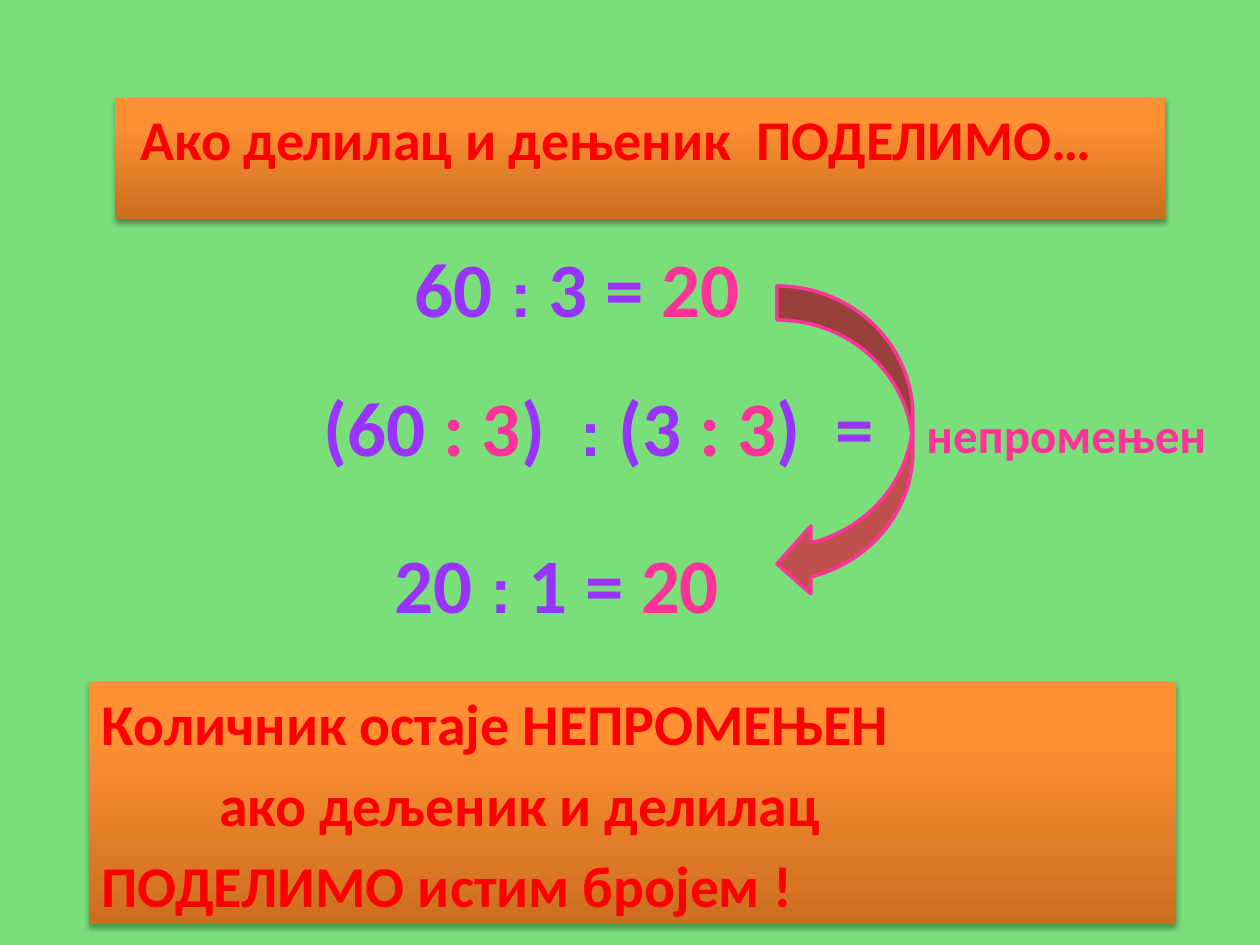
"""Build a slide showing that a quotient stays unchanged when both terms are divided."""
from copy import deepcopy
from dataclasses import dataclass

from lxml import etree
from pptx import Presentation
from pptx import util as u
from pptx.dml.color import RGBColor
from pptx.enum import shapes, text
from pptx.oxml.ns import qn

EMU_PER_PX = 914400 / 126


@dataclass(frozen=True)
class Theme:
    background: str = "7ADE7A"
    rule: str = "FF0000"
    number: str = "9933FF"
    accent: str = "FF3399"
    arrow: str = "C0504D"
    gradient: tuple[tuple[float, str], ...] = ((0, "CC6E20"), (0.8, "FF9034"), (1, "FF9136"))
    font: str = "Calibri"
    colon_font: str = "Arial"
    number_size: int = 44
    colon_size: int = 36
    heading_size: int = 32
    rule_size: int = 33
    label_size: int = 28
    arrow_width: int = 2


@dataclass(frozen=True)
class Box:
    left: int
    top: int
    width: int
    height: int

    def emu(self) -> tuple[int, ...]:
        return tuple(px(v) for v in (self.left, self.top, self.width, self.height))


@dataclass(frozen=True)
class Term:
    wording: str
    color: str
    colon: bool = False


@dataclass(frozen=True)
class Equation:
    box: Box
    terms: tuple[Term, ...]


@dataclass(frozen=True)
class Line:
    wording: str
    indent: int = 0


@dataclass(frozen=True)
class Banner:
    box: Box
    size: int
    lines: tuple[Line, ...]


THEME = Theme()
N, A = THEME.number, THEME.accent

EQUATIONS = (
    Equation(Box(32, 347, 1134, 158), (
        Term("(60", N), Term(" : 3", A), Term(")  ", N), Term(": ", N, True),
        Term("(3 ", N), Term(": 3", A), Term(")  =", N))),
    Equation(Box(10, 208, 1134, 158), (
        Term("60 ", N), Term(": ", N, True), Term("3 = ", N), Term("20", A))),
    Equation(Box(-10, 504, 1134, 158), (
        Term("20 ", N), Term(":", N, True), Term(" 1 = ", N), Term("20", A))),
)
BANNERS = (
    Banner(Box(89, 682, 1087, 242), THEME.rule_size, (
        Line("Количник остаје НЕПРОМЕЊЕН"),
        Line("ако дељеник и делилац", 118),
        Line("ПОДЕЛИМО истим бројем !"))),
    Banner(Box(115, 98, 1050, 121), THEME.heading_size, (
        Line("Ако делилац и дењеник  ПОДЕЛИМО…", 13),)),
)


def px(length: int) -> int:
    return round(length * EMU_PER_PX)


def set_font(font, size: int, color: str, name: str = THEME.font) -> None:
    font.name, font.size, font.bold = name, u.Pt(size), True
    font.color.rgb = RGBColor.from_string(color)


def add_shadow(shape) -> None:
    effects = etree.SubElement(shape._element.spPr, qn("a:effectLst"))
    outer = etree.SubElement(effects, qn("a:outerShdw"), blurRad="40000", dist="23000",
                             dir="5400000", rotWithShape="0")
    black = etree.SubElement(outer, qn("a:srgbClr"), val="000000")
    etree.SubElement(black, qn("a:alpha"), val="35000")


def fill_gradient(shape) -> None:
    fill = shape.fill
    fill.gradient()
    fill.gradient_angle = 90
    stops = shape._element.spPr.find(".//" + qn("a:gsLst"))
    stops.append(deepcopy(stops[-1]))
    for stop, (position, color) in zip(fill.gradient_stops, THEME.gradient):
        stop.position = position
        stop.color.rgb = RGBColor.from_string(color)


def draw_banner(slide, banner: Banner) -> None:
    panel = slide.shapes.add_shape(shapes.MSO_SHAPE.RECTANGLE, *banner.box.emu())
    fill_gradient(panel)
    panel.line.fill.background()
    add_shadow(panel)
    frame = panel.text_frame
    frame.word_wrap = True
    frame.vertical_anchor = text.MSO_ANCHOR.TOP
    for index, line in enumerate(banner.lines):
        paragraph = frame.add_paragraph() if index else frame.paragraphs[0]
        paragraph.text = line.wording
        paragraph.alignment = text.PP_ALIGN.LEFT
        paragraph.space_before = u.Pt(round(banner.size * 0.2, 1))
        set_font(paragraph.font, banner.size, THEME.rule)
        if line.indent:
            paragraph._p.get_or_add_pPr().set("marL", str(px(line.indent)))


def draw_equation(slide, equation: Equation) -> None:
    frame = slide.shapes.add_textbox(*equation.box.emu()).text_frame
    frame.word_wrap = True
    frame.vertical_anchor = text.MSO_ANCHOR.MIDDLE
    paragraph = frame.paragraphs[0]
    paragraph.alignment = text.PP_ALIGN.CENTER
    for term in equation.terms:
        run = paragraph.add_run()
        run.text = term.wording
        if term.colon:
            set_font(run.font, THEME.colon_size, term.color, THEME.colon_font)
        else:
            set_font(run.font, THEME.number_size, term.color)


def draw_arrow(slide, box: Box) -> None:
    arrow = slide.shapes.add_shape(shapes.MSO_SHAPE.CURVED_LEFT_ARROW, *box.emu())
    arrow.shadow.inherit = False
    arrow.fill.solid()
    arrow.fill.fore_color.rgb = RGBColor.from_string(THEME.arrow)
    arrow.line.color.rgb = RGBColor.from_string(THEME.accent)
    arrow.line.width = u.Pt(THEME.arrow_width)


def draw_label(slide, box: Box, wording: str) -> None:
    frame = slide.shapes.add_textbox(*box.emu()).text_frame
    frame.word_wrap = True
    frame.auto_size = text.MSO_AUTO_SIZE.SHAPE_TO_FIT_TEXT
    paragraph = frame.paragraphs[0]
    paragraph.text = wording
    set_font(paragraph.font, THEME.label_size, THEME.accent)


def main() -> None:
    deck = Presentation()
    deck.slide_width, deck.slide_height = px(1260), px(945)
    slide = deck.slides.add_slide(deck.slide_layouts[6])
    slide.background.fill.solid()
    slide.background.fill.fore_color.rgb = RGBColor.from_string(THEME.background)
    for banner in BANNERS:
        draw_banner(slide, banner)
    for equation in EQUATIONS:
        draw_equation(slide, equation)
    draw_arrow(slide, Box(777, 286, 136, 312))
    draw_label(slide, Box(914, 398, 315, 72), "непромењен")
    deck.save("out.pptx")


if __name__ == "__main__":
    main()
